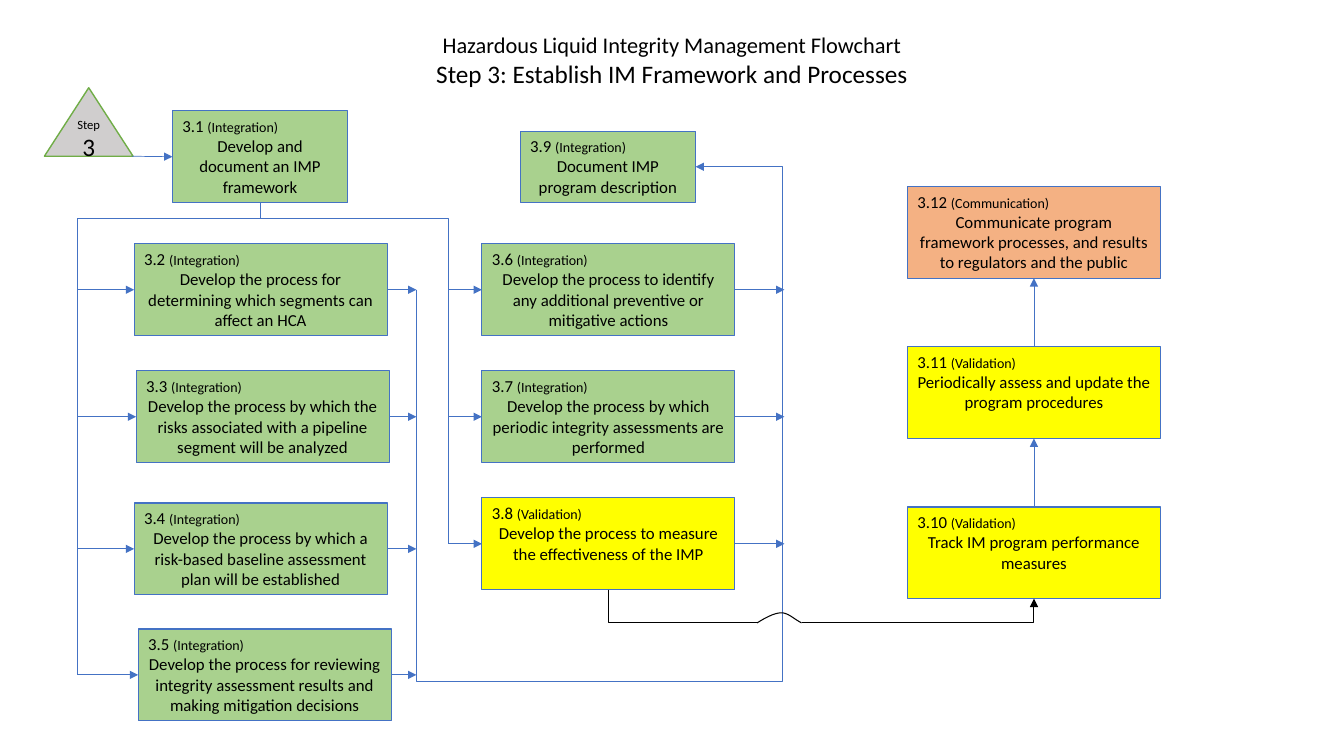
from dataclasses import dataclass

from lxml import etree
from pptx import Presentation
from pptx import util as u
from pptx.dml.color import RGBColor
from pptx.enum import shapes, text
from pptx.oxml import ns

COLS, ROWS = 13.33, 7.5
TOP, LEFT, BOTTOM, RIGHT = range(4)


@dataclass(frozen=True)
class Theme:
    font: str = "Calibri"
    ink: str = "000000"
    edge: str = "4472C4"
    integration: str = "A9D18E"
    validation: str = "FFFF00"
    communication: str = "F4B183"
    step_fill: str = "D0CECE"
    step_edge: str = "70AD47"
    heading: int = 18
    subheading: int = 16
    body: int = 12
    tag: int = 10
    small: int = 9
    flow: float = 0.5
    outline: float = 0.75


@dataclass(frozen=True)
class Box:
    x: float
    y: float
    w: float
    h: float

    def side(self, site):
        mid_x, mid_y = self.x + self.w / 2, self.y + self.h / 2
        return [(mid_x, self.y), (self.x, mid_y),
                (mid_x, self.y + self.h), (self.x + self.w, mid_y)][site]

    def inner(self, x, y, w, h):
        return Box(self.x + x, self.y + y, w, h)

    def emu(self):
        return [grid(v) for v in (self.x, self.y, self.w, self.h)]


T = Theme()
FILLS = {"Integration": T.integration, "Validation": T.validation,
         "Communication": T.communication}


def grid(n):
    return u.Emu(round(u.Inches(1) * n))


def rgb(value):
    return RGBColor.from_string(value)


def write(p, words, size=T.body, color=T.ink, align=text.PP_ALIGN.CENTER):
    p.alignment = align
    r = p.add_run()
    r.text = words
    r.font.name, r.font.size = T.font, u.Pt(size)
    r.font.color.rgb = rgb(color)


def stroke(sp, color, width, arrow=False):
    sp.line.color.rgb = rgb(color)
    sp.line.width = u.Pt(width)
    if arrow:
        ln = sp.line._get_or_add_ln()
        etree.SubElement(ln, ns.qn("a:tailEnd"), type="triangle")


def connect(sl, kind, ends, color, width, arrow):
    con = sl.shapes.add_connector(kind, *[grid(v) for v in ends])
    stroke(con, color, width, arrow)
    etree.SubElement(con._element.spPr, ns.qn("a:effectLst"))
    return con


def straight(sl, start, end, source=None, target=None, arrow=True):
    con = connect(sl, shapes.MSO_CONNECTOR.STRAIGHT, (*start, *end), T.edge, T.flow, arrow)
    if source:
        con.begin_connect(*source)
    if target:
        con.end_connect(*target)


def elbow(sl, start, end, preset, bends=(), down=True, color=T.edge, width=T.flow, arrow=False):
    dx, dy = end[0] - start[0], end[1] - start[1]
    w, h = (abs(dy), abs(dx)) if down else (abs(dx), abs(dy))
    x, y = (start[0] + end[0] - w) / 2, (start[1] + end[1] - h) / 2
    con = connect(sl, shapes.MSO_CONNECTOR.ELBOW, (x, y, x + w, y + h), color, width, arrow)
    xfrm = con._element.spPr.find(ns.qn("a:xfrm"))
    if down:
        xfrm.set("rot", str((270 if dx > 0 and dy > 0 else 90) * 60000))
    if (dx > 0) == down:
        xfrm.set("flipH", "1")
    if dy < 0:
        xfrm.set("flipV", "1")
    geom = con._element.spPr.find(ns.qn("a:prstGeom"))
    geom.set("prst", preset)
    guides = geom.find(ns.qn("a:avLst"))
    if guides is None:
        guides = etree.SubElement(geom, ns.qn("a:avLst"))
    for i, (bend, length) in enumerate(zip(bends, (w, h)), 1):
        share = round(bend / length * 100000)
        etree.SubElement(guides, ns.qn("a:gd"), name=f"adj{i}", fmla=f"val {share}")


def process(sl, box, number, tag, words):
    sp = sl.shapes.add_shape(shapes.MSO_SHAPE.RECTANGLE, *box.emu())
    sp.shadow.inherit = False
    sp.fill.solid()
    sp.fill.fore_color.rgb = rgb(FILLS[tag])
    stroke(sp, T.edge, T.outline)
    tf = sp.text_frame
    tf.word_wrap, tf.vertical_anchor = True, text.MSO_ANCHOR.TOP
    p = tf.paragraphs[0]
    write(p, number + " ", align=text.PP_ALIGN.LEFT)
    write(p, f"({tag})", size=T.tag, align=text.PP_ALIGN.LEFT)
    write(tf.add_paragraph(), words)
    return sp


def title(sl, box):
    sp = sl.shapes.title
    sp.left, sp.top, sp.width, sp.height = box.emu()
    tf = sp.text_frame
    tf.auto_size, tf.vertical_anchor = text.MSO_AUTO_SIZE.NONE, text.MSO_ANCHOR.TOP
    write(tf.paragraphs[0], "Hazardous Liquid Integrity Management Flowchart", size=T.subheading)
    write(tf.add_paragraph(), "Step 3: Establish IM Framework and Processes", size=T.heading)


def start(sl, box):
    sp = sl.shapes.add_shape(shapes.MSO_SHAPE.ISOSCELES_TRIANGLE, *box.inner(0, 0, 0.88, 0.68).emu())
    sp.shadow.inherit = False
    sp.fill.solid()
    sp.fill.fore_color.rgb = rgb(T.step_fill)
    stroke(sp, T.step_edge, 1)
    tf = sp.text_frame
    tf.margin_left = tf.margin_right = 0
    tf.vertical_anchor = text.MSO_ANCHOR.MIDDLE
    write(tf.paragraphs[0], "Step", size=T.small)
    write(tf.add_paragraph(), "3", size=T.heading)
    first = box.inner(1.27, 0.23, 1.74, 0.91)
    sp = process(sl, first, "3.1", "Integration", "Develop and document an IMP framework")
    straight(sl, (box.x + 0.87, box.y + 0.68), first.side(LEFT), target=(sp, LEFT))
    return first.side(BOTTOM)


def branch(sl, box, steps, lane_in, lane_out):
    cells = []
    for shift, top, *words in steps:
        cell = box.inner(shift, top, box.w, 0.91)
        sp = process(sl, cell, *words)
        (x0, y), (x1, _) = cell.side(LEFT), cell.side(RIGHT)
        straight(sl, (lane_in, y), (x0, y), target=(sp, LEFT))
        straight(sl, (x1, y), (lane_out, y), source=(sp, RIGHT))
        cells.append(cell)
    return cells


def reporting(sl, box, pitch, steps):
    below = None
    for i, words in enumerate(steps):
        cell = box.inner(0, box.h - 0.91 - i * pitch, box.w, 0.91)
        sp = process(sl, cell, *words)
        if below:
            straight(sl, below[1].side(TOP), cell.side(BOTTOM), (below[0], TOP), (sp, BOTTOM))
        below = sp, cell


def bridge(sl, begin, end, box):
    base = box.y + box.h
    elbow(sl, begin, (box.x, base), "bentConnector2", color=T.ink, width=T.outline)
    elbow(sl, (box.x + box.w, base), end, "bentConnector2", down=False,
          color=T.ink, width=T.outline, arrow=True)
    curves = [((0, 1), (0.18, 0.5), (0.39, 0), (0.55, 0)),
              ((0.55, 0), (0.7, 0), (0.86, 0.7), (1, 1))]
    points = []
    for curve in curves:
        for t in (i / 12 for i in range(13)):
            weights = ((1 - t) ** 3, 3 * t * (1 - t) ** 2, 3 * t * t * (1 - t), t ** 3)
            x, y = (sum(k * v for k, v in zip(weights, axis)) for axis in zip(*curve))
            points.append((grid(box.x + x * box.w), grid(box.y + y * box.h)))
    fb = sl.shapes.build_freeform(*points[0], scale=1.0)
    fb.add_line_segments(points[1:], close=False)
    sp = fb.convert_to_shape()
    sp.shadow.inherit = False
    sp.fill.background()
    stroke(sp, T.ink, T.outline)


def main():
    prs = Presentation()
    prs.slide_width, prs.slide_height = grid(COLS), grid(ROWS)
    sl = prs.slides.add_slide(prs.slide_layouts[5])
    title(sl, Box(3.68, 0.26, 5.97, 0.67))
    trunk = start(sl, Box(0.44, 0.87, 3.01, 1.14))
    left = branch(sl, Box(1.33, 2.42, 2.51, 4.73), [
        (0, 0, "3.2", "Integration", "Develop the process for determining which segments can affect an HCA"),
        (0.02, 1.26, "3.3", "Integration", "Develop the process by which the risks associated with a pipeline segment will be analyzed"),
        (0, 2.57, "3.4", "Integration", "Develop the process by which a risk-based baseline assessment plan will be established"),
        (0.04, 3.82, "3.5", "Integration", "Develop the process for reviewing integrity assessment results and making mitigation decisions"),
    ], 0.77, 4.13)
    middle = branch(sl, Box(4.78, 2.42, 2.51, 3.43), [
        (0, 0, "3.6", "Integration", "Develop the process to identify any additional preventive or mitigative actions"),
        (0, 1.26, "3.7", "Integration", "Develop the process by which periodic integrity assessments are performed"),
        (0, 2.52, "3.8", "Validation", "Develop the process to measure the effectiveness of the IMP"),
    ], 4.45, 7.78)
    summary = Box(5.16, 1.3, 1.74, 0.71)
    process(sl, summary, "3.9", "Integration", "Document IMP program description")
    for lane, cells in ((0.77, left), (4.45, middle)):
        elbow(sl, trunk, (lane, cells[-1].side(LEFT)[1]), "bentConnector3", (0.16,))
    first, last = left[0].side(RIGHT)[1], left[-1].side(RIGHT)[1]
    straight(sl, (4.13, first), (4.13, last), arrow=False)
    elbow(sl, (4.13, last), summary.side(RIGHT), "bentConnector4", (-0.06, 3.63), arrow=True)
    reports = Box(9, 1.85, 2.51, 4.09)
    reporting(sl, reports, 1.59, [
        ("3.10", "Validation", "Track IM program performance measures"),
        ("3.11", "Validation", "Periodically assess and update the program procedures"),
        ("3.12", "Communication", "Communicate program framework processes, and results to regulators and the public"),
    ])
    bridge(sl, middle[-1].side(BOTTOM), reports.side(BOTTOM), Box(7.51, 6.08, 0.44, 0.1))
    prs.save("out.pptx")


if __name__ == "__main__":
    main()
